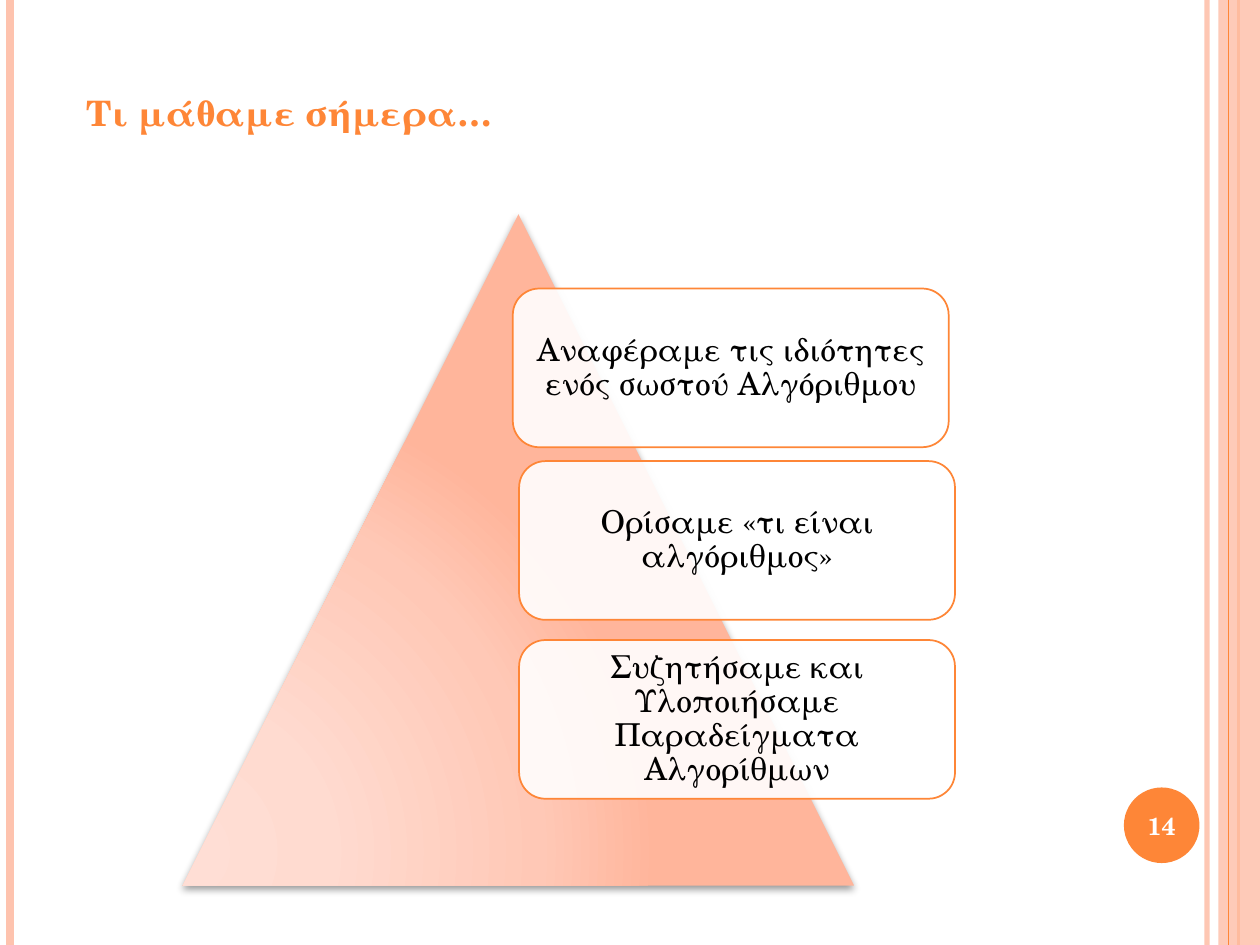
from dataclasses import dataclass

from lxml import etree
from pptx import Presentation
from pptx.dml.color import RGBColor
from pptx.enum.shapes import MSO_CONNECTOR, MSO_SHAPE
from pptx.enum.text import MSO_ANCHOR, MSO_AUTO_SIZE, PP_ALIGN
from pptx.oxml import parse_xml
from pptx.oxml.ns import nsdecls, qn
from pptx.shapes.autoshape import Shape
from pptx.slide import Slide
from pptx.text.text import TextFrame
from pptx.util import Inches, Pt

STRAIGHT = MSO_CONNECTOR.STRAIGHT
RECTANGLE, OVAL = MSO_SHAPE.RECTANGLE, MSO_SHAPE.OVAL
TRIANGLE, ROUNDED = MSO_SHAPE.ISOSCELES_TRIANGLE, MSO_SHAPE.ROUNDED_RECTANGLE
CENTER, LEFT = PP_ALIGN.CENTER, PP_ALIGN.LEFT
MIDDLE = MSO_ANCHOR.MIDDLE
GROW = MSO_AUTO_SIZE.SHAPE_TO_FIT_TEXT


@dataclass(frozen=True)
class Theme:
    font: str = "TeX Gyre Schola"
    accent: str = "FE8637"
    pale: str = "FEC3AE"
    white: str = "FFFFFF"
    ink: str = "000000"
    pyramid: tuple = ((0, "FFDED5"), (30, "FFDBD0"), (75, "FFC8B6"), (100, "FFB59B"))
    title_size: float = 20
    card_size: float = 18
    number_size: float = 14


@dataclass(frozen=True)
class Stripe:
    x: float
    color: str
    width: float
    opacity: int = 100


@dataclass(frozen=True)
class Card:
    left: float
    top: float
    text: str


THEME = Theme()
SLIDE_HEIGHT = 7.5
CARD_WIDTH, CARD_HEIGHT, CARD_INSET = 3.46, 1.26, 0.07

STRIPES_BEHIND = [
    Stripe(9.58, THEME.pale, 3, 93),
    Stripe(0.08, THEME.pale, 4.5),
    Stripe(9.83, THEME.accent, 1.5),
]
STRIPE_IN_FRONT = Stripe(9.75, THEME.accent, 0.75)
CARDS = [
    Card(4.07, 2.29, "Αναφέραμε τις ιδιότητες ενός σωστού Αλγόριθμου"),
    Card(4.12, 3.66, "Ορίσαμε «τι είναι αλγόριθμος»"),
    Card(4.12, 5.08, "Συζητήσαμε και Υλοποιήσαμε Παραδείγματα Αλγορίθμων"),
]


def set_opacity(owner: Shape, percent: int) -> None:
    color = next(owner.element.spPr.iter(qn("a:srgbClr")))
    etree.SubElement(color, qn("a:alpha"), val=str(percent * 1000))


def draw_stripe(slide: Slide, stripe: Stripe) -> None:
    x = Inches(stripe.x)
    line = slide.shapes.add_connector(STRAIGHT, x, 0, x, Inches(SLIDE_HEIGHT))
    line.line.color.rgb = RGBColor.from_string(stripe.color)
    line.line.width = Pt(stripe.width)
    if stripe.opacity < 100:
        set_opacity(line, stripe.opacity)
    etree.SubElement(line.element.spPr, qn("a:effectLst"))


def draw_shape(slide: Slide, kind: int, left: float, top: float, width: float,
               height: float, fill: str = "", opacity: int = 100) -> Shape:
    shape = slide.shapes.add_shape(
        kind, Inches(left), Inches(top), Inches(width), Inches(height))
    shape.shadow.inherit = False
    shape.line.fill.background()
    if fill:
        shape.fill.solid()
        shape.fill.fore_color.rgb = RGBColor.from_string(fill)
    if opacity < 100:
        set_opacity(shape, opacity)
    return shape


def write(frame: TextFrame, text: str, size: float, color: str, bold: bool = False,
          align: int = CENTER, spacing: float = 1.0) -> None:
    frame.word_wrap = True
    paragraph = frame.paragraphs[0]
    paragraph.alignment = align
    paragraph.line_spacing = spacing
    run = paragraph.add_run()
    run.text = text
    run.font.name = THEME.font
    run.font.size = Pt(size)
    run.font.bold = bold
    run.font.color.rgb = RGBColor.from_string(color)


def set_insets(frame: TextFrame, inset: float) -> None:
    frame.margin_left = frame.margin_right = Inches(inset)
    frame.margin_top = frame.margin_bottom = Inches(inset)
    frame.vertical_anchor = MIDDLE


def draw_pyramid(slide: Slide) -> None:
    pyramid = draw_shape(slide, TRIANGLE, 1.45, 1.7, 5.33, 5.33)
    stops = "".join(
        f'<a:gs pos="{position * 1000}"><a:srgbClr val="{color}"/></a:gs>'
        for position, color in THEME.pyramid)
    gradient = parse_xml(
        f'<a:gradFill {nsdecls("a")} rotWithShape="1"><a:gsLst>{stops}</a:gsLst>'
        '<a:path path="circle">'
        '<a:fillToRect l="5000" t="100000" r="120000" b="10000"/>'
        '</a:path></a:gradFill>')
    properties = pyramid.element.spPr
    properties.find(qn("a:prstGeom")).addnext(gradient)
    properties.find(qn("a:effectLst")).append(parse_xml(
        f'<a:outerShdw {nsdecls("a")} blurRad="{Pt(4)}" dist="{Pt(2)}" '
        f'dir="5400000" rotWithShape="0"><a:srgbClr val="{THEME.ink}">'
        '<a:alpha val="40000"/></a:srgbClr></a:outerShdw>'))


def draw_card(slide: Slide, card: Card) -> None:
    box = draw_shape(slide, ROUNDED, card.left, card.top, CARD_WIDTH, CARD_HEIGHT,
                     THEME.white, 90)
    box.line.color.rgb = RGBColor.from_string(THEME.accent)
    box.line.width = Pt(1)
    set_insets(box.text_frame, CARD_INSET)
    write(box.text_frame, card.text, THEME.card_size, THEME.ink, spacing=0.9)


def draw_page_number(slide: Slide, number: str) -> None:
    badge = draw_shape(slide, OVAL, 8.92, 6.25, 0.6, 0.6, THEME.accent)
    set_insets(badge.text_frame, 0)
    write(badge.text_frame, number, THEME.number_size, THEME.white, bold=True)


def draw_title(slide: Slide, text: str) -> None:
    title = slide.shapes.add_textbox(
        Inches(0.59), Inches(0.68), Inches(4.25), Inches(0.44))
    title.text_frame.auto_size = GROW
    write(title.text_frame, text, THEME.title_size, THEME.accent, bold=True, align=LEFT)


def main() -> None:
    presentation = Presentation()
    presentation.slide_width = Inches(10)
    presentation.slide_height = Inches(SLIDE_HEIGHT)
    slide = presentation.slides.add_slide(presentation.slide_layouts[6])
    for stripe in STRIPES_BEHIND:
        draw_stripe(slide, stripe)
    draw_shape(slide, RECTANGLE, 9.67, 0, 0.33, SLIDE_HEIGHT, THEME.pale, 87)
    draw_stripe(slide, STRIPE_IN_FRONT)
    draw_page_number(slide, "14")
    draw_pyramid(slide)
    for card in CARDS:
        draw_card(slide, card)
    draw_title(slide, "Τι μάθαμε σήμερα…")
    presentation.save("out.pptx")


if __name__ == "__main__":
    main()
